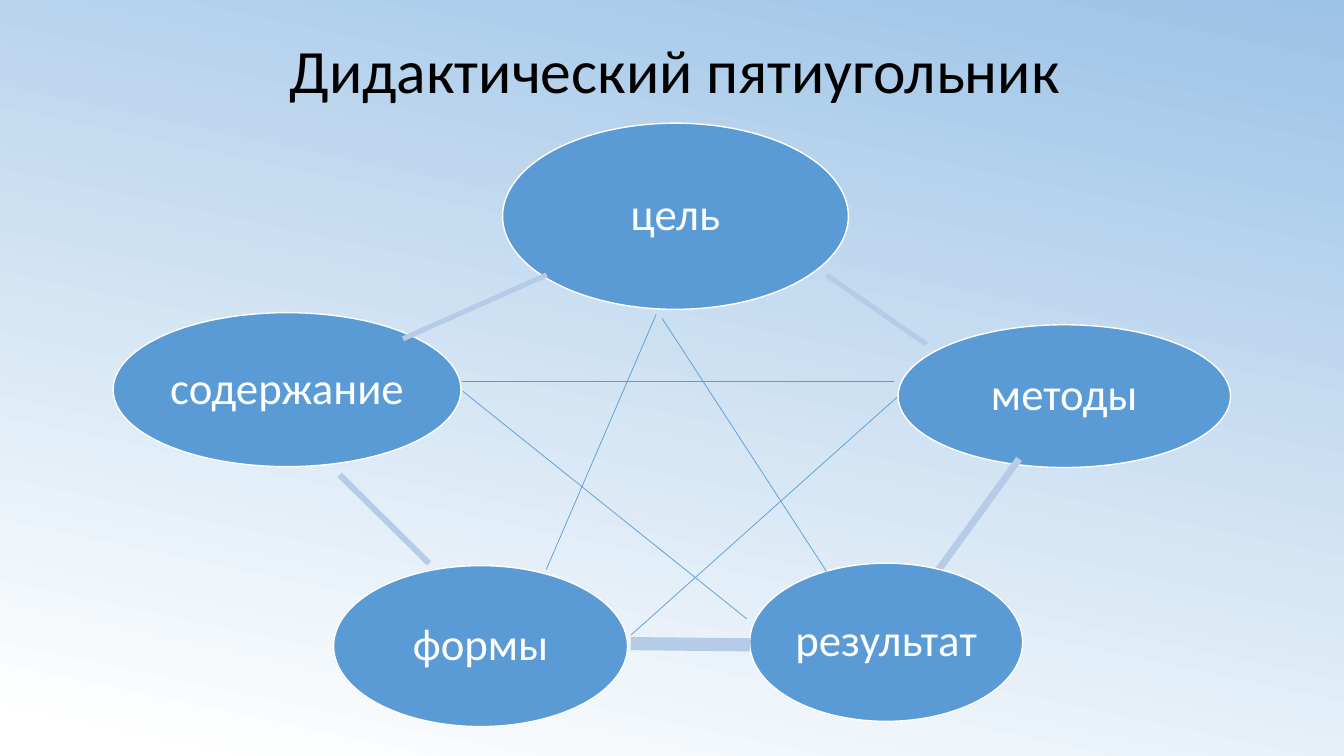
import dataclasses

import pptx
import pptx.dml.color
import pptx.enum.shapes
import pptx.enum.text
import pptx.oxml.ns
import pptx.util
from lxml import etree

Pt = pptx.util.Pt
RGB = pptx.dml.color.RGBColor.from_string
SHAPES = pptx.enum.shapes.MSO_SHAPE


@dataclasses.dataclass(frozen=True)
class Theme:
    font: str = "Calibri"
    title_size: int = 44
    label_size: int = 32
    black: str = "000000"
    white: str = "FFFFFF"
    sky: str = "9DC3E6"
    blue: str = "5B9BD5"
    pale_blue: str = "B5CBE7"


THEME = Theme()


def write(frame, text, *, size, color, inset):
    frame.word_wrap = True
    frame.auto_size = pptx.enum.text.MSO_AUTO_SIZE.NONE
    frame.vertical_anchor = pptx.enum.text.MSO_ANCHOR.MIDDLE
    frame.margin_left = frame.margin_right = Pt(inset)
    frame.margin_top = frame.margin_bottom = Pt(inset)
    paragraph = frame.paragraphs[0]
    paragraph.text = text
    paragraph.alignment = pptx.enum.text.PP_ALIGN.CENTER
    paragraph.line_spacing = 0.9
    font = paragraph.runs[0].font
    font.name, font.size, font.color.rgb = THEME.font, Pt(size), RGB(color)


def add_filled(preset, box, color):
    shape = slide.shapes.add_shape(preset, *map(Pt, box))
    shape.shadow.inherit = False
    shape.fill.solid()
    shape.fill.fore_color.rgb = RGB(color)
    return shape


presentation = pptx.Presentation()
presentation.slide_width, presentation.slide_height = Pt(960), Pt(540)
slide = presentation.slides.add_slide(presentation.slide_layouts[5])

background = slide.background.fill
background.gradient()
background.gradient_angle = 258
for stop, color, position in zip(background.gradient_stops, (THEME.sky, THEME.white), (0, 0.97)):
    stop.color.rgb = RGB(color)
    stop.position = position

title = slide.shapes.title
title.left, title.top, title.width, title.height = Pt(68.4), Pt(0), Pt(828), Pt(104.4)
write(title.text_frame, "Дидактический пятиугольник",
      size=THEME.title_size, color=THEME.black, inset=4)

# Each corner of the pentagon: label, ellipse box, side to the next corner, angle of that side
corners = [
    ("цель", (359, 88, 247, 133), (583, 219.5, 86.5, 3.6), 34.8),
    ("методы", (641.5, 232, 237.5, 102), (648.5, 365.7, 100, 5), 126),
    ("результат", (535.5, 402.3, 195, 113), (450.6, 455.5, 85, 9.4), 0.6),
    ("формы", (238.3, 404, 210, 115), (229.5, 368.6, 90, 4.3), 44.7),
    ("содержание", (80.8, 223.3, 248.5, 110), (283, 217.4, 112.3, 3.6), 336),
]
for label, ellipse_box, side_box, angle in corners:
    corner = add_filled(SHAPES.OVAL, ellipse_box, THEME.blue)
    corner.line.color.rgb = RGB(THEME.white)
    corner.line.width = Pt(1)
    write(corner.text_frame, label, size=THEME.label_size, color=THEME.white, inset=3)
    side = add_filled(SHAPES.RECTANGLE, side_box, THEME.pale_blue)
    side.line.fill.background()
    side.rotation = angle

diagonals = [
    (468.7, 224.6, 390.2, 406.8),
    (473, 227.5, 590.4, 408.2),
    (640.8, 283.7, 450.7, 453.6),
    (330.5, 279.4, 533.5, 442.1),
    (329.8, 272.2, 638.6, 272.2),
]
for ends in diagonals:
    diagonal = slide.shapes.add_connector(
        pptx.enum.shapes.MSO_CONNECTOR.STRAIGHT, *map(Pt, ends))
    diagonal.line.color.rgb = RGB(THEME.blue)
    diagonal.line.width = Pt(0.5)
    etree.SubElement(diagonal._element.spPr, pptx.oxml.ns.qn("a:effectLst"))

presentation.save("out.pptx")
